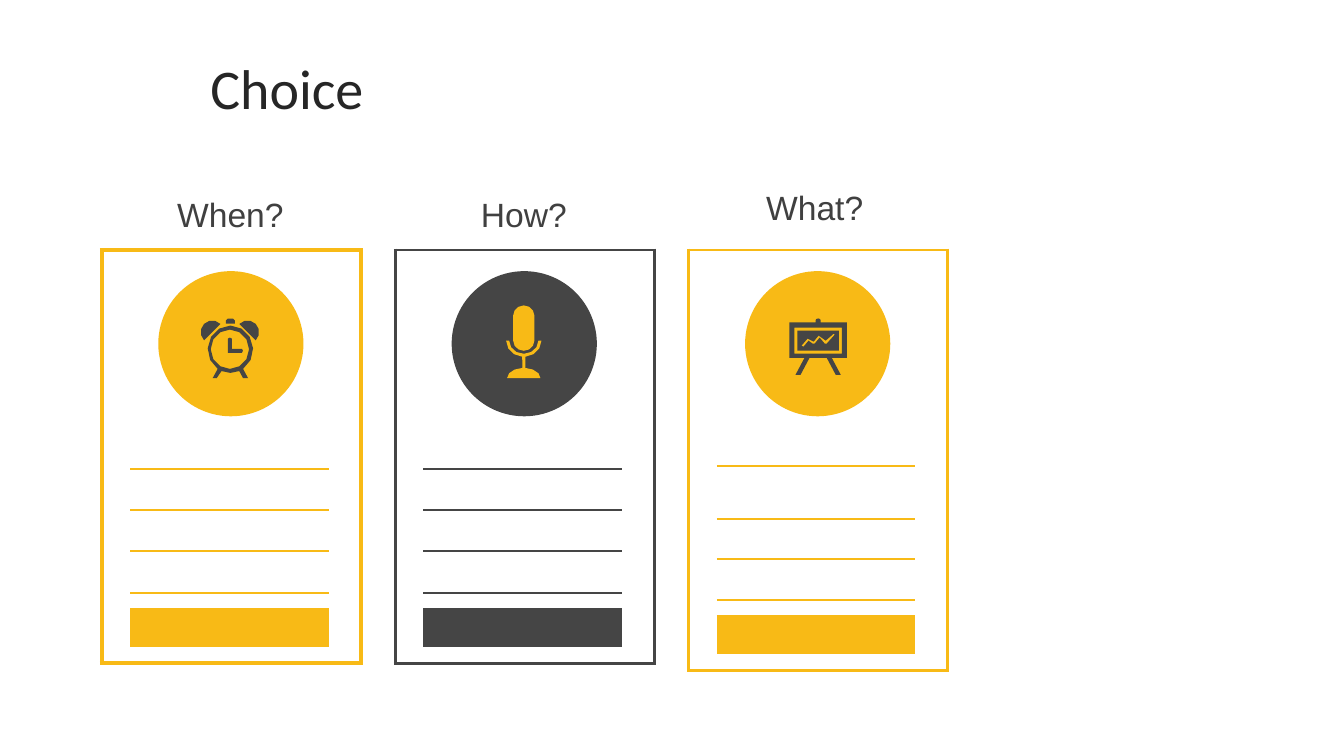
"""Build the Choice slide: three outlined cards, each with a heading and an icon."""
from math import cos, radians, sin

from lxml.etree import SubElement
from pptx import Presentation
from pptx.dml.color import RGBColor
from pptx.enum.shapes import MSO_SHAPE as Shape
from pptx.enum.text import MSO_ANCHOR as Anchor, PP_ALIGN as Align
from pptx.oxml import parse_xml
from pptx.oxml.ns import nsdecls, qn
from pptx.util import Pt

PX = 9144
THEME = {
    "yellow": "F8BA16", "dark": "454545", "heading": "404040", "title": "262626",
    "heading_size": 24, "title_size": 40, "cell_size": 4,
    "heading_font": "Arial", "title_font": "Calibri",
}
NO_GRID = "{2D5ABB26-0587-4C30-8999-92F81FD0307C}"


def add_text(page, text, left, top, width, height, *, font, size, color,
             side_inset=0, anchor=Anchor.TOP, line_spacing=None, space_before=None):
    box = page.shapes.add_textbox(left * PX, top * PX, width * PX, height * PX)
    frame = box.text_frame
    frame.word_wrap = True
    frame.vertical_anchor = anchor
    frame.margin_left = frame.margin_right = side_inset * PX
    frame.margin_top = frame.margin_bottom = 5 * PX
    para = frame.paragraphs[0]
    para.alignment = Align.CENTER
    para.line_spacing = line_spacing
    para.space_before = space_before
    span = para.add_run()
    span.text = text
    span.font.name = font
    span.font.size = Pt(size)
    span.font.color.rgb = RGBColor.from_string(color)


def arc(left, top, right, bottom, start, stop):
    center_x, center_y = (left + right) / 2, (top + bottom) / 2
    steps = max(2, round(abs(stop - start) / 30))
    angles = [radians(start + (stop - start) * step / steps) for step in range(steps + 1)]
    return [(center_x + (right - left) / 2 * cos(angle),
             center_y + (bottom - top) / 2 * sin(angle)) for angle in angles]


clock = [
    [(226, 336), (228, 335), (230, 336), (230, 346), (240, 346), (241, 348),
     (240, 350), (226, 350)],
    arc(209, 327, 247, 366, 0, 330),
    arc(206, 323, 251, 370, 124, 416) + [(246, 375), (241, 375)]
    + arc(206, 323, 251, 370, 67, 113) + [(215, 375), (211, 375)],
    arc(199, 318, 222, 341, 135, 315),
    arc(234, 318, 257, 341, 225, 405),
    [(224, 321), (224, 318), (226, 316), (231, 316), (233, 318), (233, 321)],
]
microphone = [
    arc(502, 322, 537, 354, 0, 85) + arc(503, 365, 536, 385, 275, 360)
    + arc(503, 365, 536, 385, 180, 265) + arc(502, 322, 537, 354, 95, 180)
    + arc(505, 325, 534, 351, 180, 0),
    arc(509, 303, 530, 323, 180, 360) + arc(509, 328, 530, 348, 0, 180),
]
board = [
    arc(809, 316, 814, 320, 180, 360)
    + [(814, 320), (840, 320), (840, 355), (825, 355), (834, 372), (829, 372),
       (820, 355), (803, 355), (794, 372), (789, 372), (798, 355), (783, 355),
       (783, 320), (809, 320)],
    [(788, 325), (835, 325), (835, 351), (788, 351)],
    [(791, 328), (832, 328), (832, 348), (791, 348)],
    [(795, 343), (801, 336), (807, 339), (812, 333), (819, 338), (827, 331),
     (828, 332), (820, 341), (818, 341), (813, 335), (808, 341), (806, 341),
     (802, 338), (797, 344)],
]

yellow, dark = THEME["yellow"], THEME["dark"]
columns = [28, 197, 32]
even_rows = [176, 41, 41, 41, 41, 16, 38, 16]
tall_rows = [174, 40, 53, 40, 40, 16, 38, 16]
cards = [
    ("When?", 187, 213, yellow, 3, even_rows, clock, dark),
    ("How?", 187, 213, dark, 2.25, even_rows, microphone, yellow),
    ("What?", 181, 208, yellow, 2.25, tall_rows, board, dark),
]

deck = Presentation()
deck.slide_width, deck.slide_height = 1333 * PX, 750 * PX
page = deck.slides.add_slide(deck.slide_layouts[6])

add_text(page, "Choice", 67, 51, 435, 79, font=THEME["title_font"],
         size=THEME["title_size"], color=THEME["title"], side_inset=10,
         anchor=Anchor.MIDDLE, line_spacing=0.9, space_before=Pt(10))

for index, (heading, heading_top, heading_width, color, border, rows, icon, icon_color) in enumerate(cards):
    left = 101 + 291 * index
    add_text(page, heading, left + 21, heading_top, heading_width, 50,
             font=THEME["heading_font"], size=THEME["heading_size"], color=THEME["heading"])

    holder = page.shapes.add_table(len(rows), len(columns), left * PX, 248 * PX,
                                   sum(columns) * PX, sum(rows) * PX)
    table = holder.table
    table.first_row = table.horz_banding = False
    next(holder._element.iter(qn("a:tableStyleId"))).text = NO_GRID
    for column, width in zip(table.columns, columns):
        column.width = width * PX
    for row, height in zip(table.rows, rows):
        row.height = height * PX
    table.cell(0, 0).merge(table.cell(0, 2))
    for side in (0, 2):
        table.cell(2, side).merge(table.cell(4, side))

    for row in range(len(rows)):
        for column in range(len(columns)):
            cell = table.cell(row, column)
            cell.margin_left = cell.margin_right = cell.margin_top = cell.margin_bottom = 0
            para = cell.text_frame.paragraphs[0]
            SubElement(para._p, qn("a:endParaRPr"), sz=str(THEME["cell_size"] * 100))
            if (row, column) == (6, 1):
                cell.fill.solid()
                cell.fill.fore_color.rgb = RGBColor.from_string(color)
            else:
                cell.fill.background()
            middle = column == 1
            edges = {
                "lnL": border if column == 0 else 0,
                "lnR": border if column == 2 or row == 0 else 0,
                "lnT": border if row == 0 else 1.5 if middle and 2 <= row <= 5 else 0,
                "lnB": border if row == 7 else 1.5 if middle and 1 <= row <= 4 else 0,
            }
            properties = cell._tc.get_or_add_tcPr()
            drawn = [(edge, weight) for edge, weight in edges.items() if weight]
            for place, (edge, weight) in enumerate(drawn):
                properties.insert(place, parse_xml(
                    f'<a:{edge} {nsdecls("a")} w="{Pt(weight)}"><a:solidFill>'
                    f'<a:srgbClr val="{color}"/></a:solidFill></a:{edge}>'))

    disc = page.shapes.add_shape(Shape.OVAL, (left + 56) * PX, 269 * PX, 144 * PX, 144 * PX)
    contours = [[(x * PX, y * PX) for x, y in contour] for contour in icon]
    builder = page.shapes.build_freeform(*contours[0][0], scale=1.0)
    builder.add_line_segments(contours[0][1:], close=True)
    for contour in contours[1:]:
        builder.move_to(*contour[0])
        builder.add_line_segments(contour[1:], close=True)
    symbol = builder.convert_to_shape()
    for shape, fill_color in ((disc, color), (symbol, icon_color)):
        shape.shadow.inherit = False
        shape.fill.solid()
        shape.fill.fore_color.rgb = RGBColor.from_string(fill_color)
        shape.line.fill.background()

deck.save("out.pptx")
